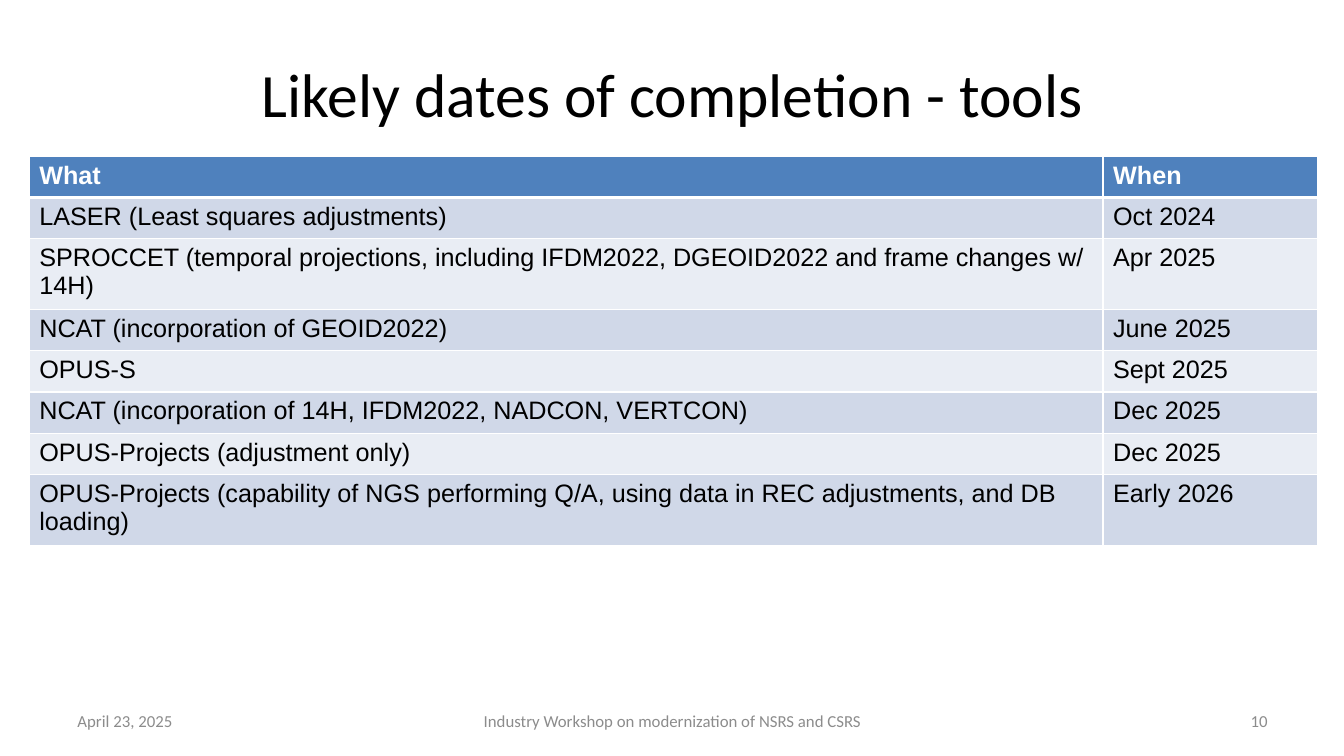
from lxml import etree
from pptx import Presentation
from pptx.dml.color import RGBColor
from pptx.enum.text import MSO_ANCHOR, PP_ALIGN
from pptx.oxml.ns import qn
from pptx.util import Emu, Pt

LEFT, CENTER, RIGHT = PP_ALIGN.LEFT, PP_ALIGN.CENTER, PP_ALIGN.RIGHT
MIDDLE = MSO_ANCHOR.MIDDLE
TITLE_ONLY = 5

COLORS = {
    "black": "000000", "white": "FFFFFF", "gray": "8C8C8C",
    "header": "4F81BD", "odd": "D0D8E8", "even": "E9EDF4",
}
ROWS = [
    ("What", "When"),
    ("LASER (Least squares adjustments)", "Oct 2024"),
    ("SPROCCET (temporal projections, including IFDM2022, DGEOID2022 "
     "and frame changes w/ 14H)", "Apr 2025"),
    ("NCAT (incorporation of GEOID2022)", "June 2025"),
    ("OPUS-S", "Sept 2025"),
    ("NCAT (incorporation of 14H, IFDM2022, NADCON, VERTCON)", "Dec 2025"),
    ("OPUS-Projects (adjustment only)", "Dec 2025"),
    ("OPUS-Projects (capability of NGS performing Q/A, using data in REC "
     "adjustments, and DB loading)", "Early 2026"),
]


def px(n):
    """100 px to the inch."""
    return Emu(n * 9144)


def rgb(name):
    return RGBColor.from_string(COLORS[name])


def write(tf, text, size=18, font="Calibri", color="black", bold=False, align=LEFT):
    tf.word_wrap = True
    p = tf.paragraphs[0]
    p.alignment = align
    r = p.add_run()
    r.text = text
    r.font.size, r.font.name, r.font.bold = Pt(size), font, bold
    r.font.color.rgb = rgb(color)


def add_border(cell, side, width):
    ln = etree.SubElement(cell._tc.get_or_add_tcPr(), qn(f"a:ln{side}"), w=str(Pt(width)))
    fill = etree.SubElement(ln, qn("a:solidFill"))
    etree.SubElement(fill, qn("a:srgbClr"), val=COLORS["white"])


def add_title(s, x, y, w, h):
    title = s.shapes.title
    title.left, title.top, title.width, title.height = map(px, (x, y, w, h))
    title.text_frame.vertical_anchor = MIDDLE
    write(title.text_frame, "Likely dates of completion - tools", size=44, align=CENTER)


def add_schedule(s, x, y, w, h):
    when_w = w // 6
    table = s.shapes.add_table(len(ROWS), 2, px(x), px(y), px(w), px(h)).table
    table.columns[0].width, table.columns[1].width = px(w - when_w), px(when_w)
    for i, row in enumerate(ROWS):
        table.rows[i].height = px(h // len(ROWS))
        fill = "header" if i == 0 else "odd" if i % 2 else "even"
        for j, text in enumerate(row):
            cell = table.cell(i, j)
            # A thick rule separates the header from the body
            for side, width in (("L", 1), ("R", 1), ("T", 3 if i == 1 else 1),
                                ("B", 3 if i == 0 else 1)):
                add_border(cell, side, width)
            cell.fill.solid()
            cell.fill.fore_color.rgb = rgb(fill)
            write(cell.text_frame, text, font="Arial", bold=i == 0,
                  color="white" if i == 0 else "black")


def add_footer(s, x, y, w, h):
    side_w, mid_w = 311, 422
    parts = [
        ("April 23, 2025", x, side_w, LEFT),
        ("Industry Workshop on modernization of NSRS and CSRS",
         x + (w - mid_w) // 2, mid_w, CENTER),
        ("10", x + w - side_w, side_w, RIGHT),
    ]
    for text, left, width, align in parts:
        tf = s.shapes.add_textbox(px(left), px(y), px(width), px(h)).text_frame
        tf.vertical_anchor = MIDDLE
        write(tf, text, size=12, color="gray", align=align)


def main():
    prs = Presentation()
    prs.slide_width, prs.slide_height = px(1333), px(750)
    s = prs.slides.add_slide(prs.slide_layouts[TITLE_ONLY])
    add_title(s, 67, 30, 1200, 125)
    add_footer(s, 67, 695, 1200, 40)
    add_schedule(s, 29, 155, 1278, 328)
    prs.save("out.pptx")


if __name__ == "__main__":
    main()
